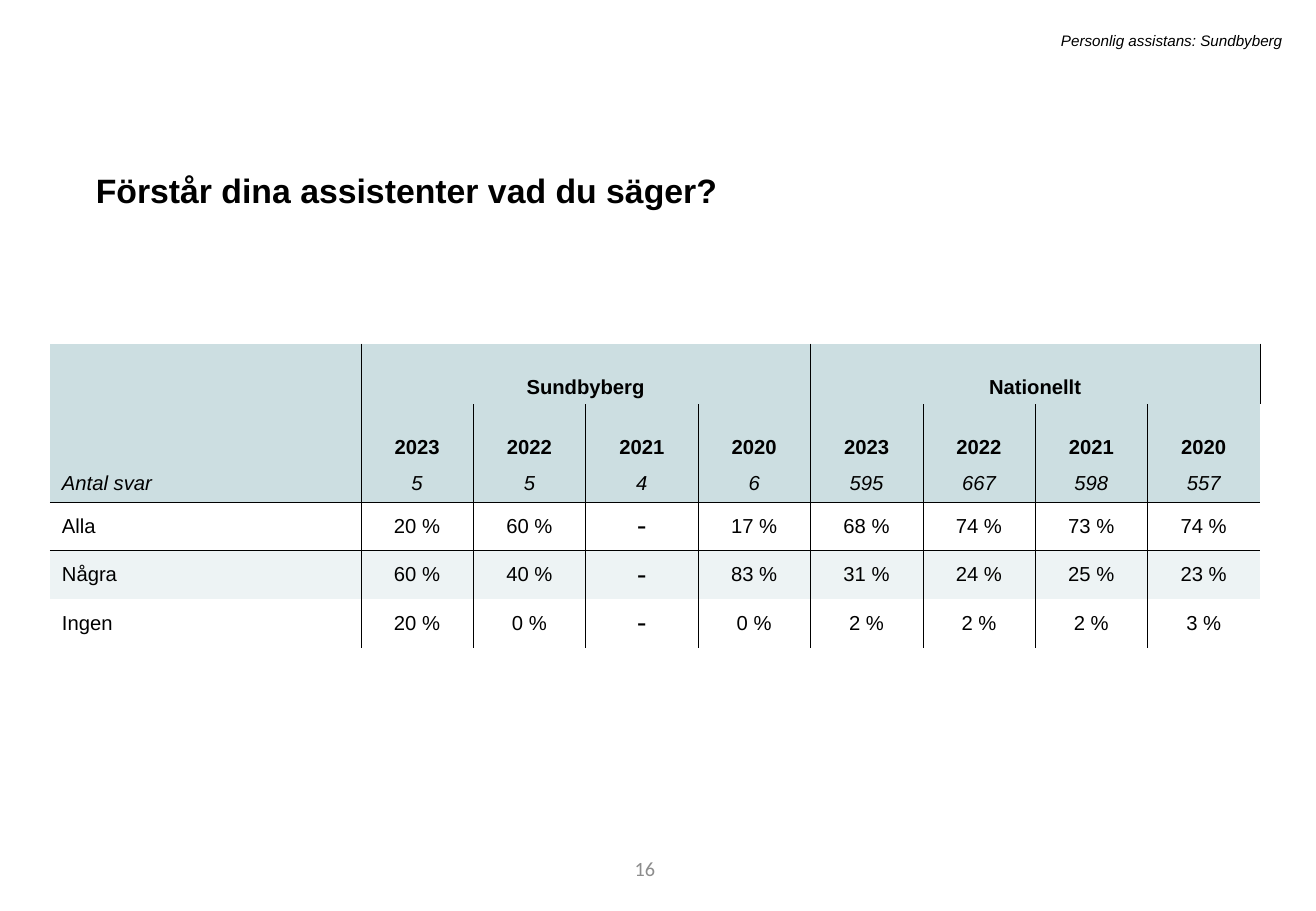
"""Build the survey results slide: do your assistants understand what you say?"""
from lxml import etree
from pptx import Presentation
from pptx.dml.color import RGBColor
from pptx.enum import text
from pptx.oxml import ns
from pptx.util import Inches, Pt

BLACK = RGBColor(0x00, 0x00, 0x00)
GREY = RGBColor(0x8C, 0x8C, 0x8C)
HEADER = RGBColor(0xCC, 0xDE, 0xE1)
BAND = RGBColor(0xED, 0xF3, 0xF4)
NO_STYLE = "{2D5ABB26-0587-4C30-8999-92F81FD0307C}"
LEFT, CENTER, RIGHT = text.PP_ALIGN.LEFT, text.PP_ALIGN.CENTER, text.PP_ALIGN.RIGHT
MIDDLE, BOTTOM = text.MSO_ANCHOR.MIDDLE, text.MSO_ANCHOR.BOTTOM

ROWS = [
    ["", "Sundbyberg", "", "", "", "Nationellt", "", "", ""],
    ["", "2023", "2022", "2021", "2020", "2023", "2022", "2021", "2020"],
    ["Antal svar", "5", "5", "4", "6", "595", "667", "598", "557"],
    ["Alla", "20 %", "60 %", "-", "17 %", "68 %", "74 %", "73 %", "74 %"],
    ["Några", "60 %", "40 %", "-", "83 %", "31 %", "24 %", "25 %", "23 %"],
    ["Ingen", "20 %", "0 %", "-", "0 %", "2 %", "2 %", "2 %", "3 %"],
]
HEIGHTS = [0.5, 0.5, 0.3, 0.4, 0.4, 0.4]
FILLS = [HEADER, HEADER, HEADER, None, BAND, None]


def add_text(s, box, words, size, color=BLACK, font="Arial", align=LEFT):
    tf = s.shapes.add_textbox(*map(Inches, box)).text_frame
    tf.word_wrap = True
    p = tf.paragraphs[0]
    p.text, p.alignment = words, align
    p.font.size, p.font.name, p.font.color.rgb = Pt(size), font, color
    return tf


def add_border(cell, side):
    ln = etree.SubElement(cell._tc.get_or_add_tcPr(), ns.qn(f"a:ln{side}"), w=str(Pt(0.25)))
    fill = etree.SubElement(ln, ns.qn("a:solidFill"))
    etree.SubElement(fill, ns.qn("a:srgbClr"), val=str(BLACK))


prs = Presentation()
prs.slide_width, prs.slide_height = Inches(10.83), Inches(7.5)
s = prs.slides.add_slide(prs.slide_layouts[6])

tf = add_text(s, (3.05, 6.95, 2.44, 0.4), "16", 12, GREY, "Calibri", RIGHT)
tf.vertical_anchor = MIDDLE

tf = add_text(s, (0.69, 1.28, 9.4, 0.47), "Förstår dina assistenter vad du säger?", 20)
p = tf.paragraphs[0]
p.font.bold, p.line_spacing, p.space_before = True, 1.2, Pt(10)

tf = add_text(s, (1.79, 0.21, 8.86, 0.25), "Personlig assistans: Sundbyberg", 9, align=RIGHT)
tf.paragraphs[0].font.italic = True

frame = s.shapes.add_table(len(ROWS), len(ROWS[0]), Inches(0.41), Inches(2.83),
                           Inches(9.96), Inches(sum(HEIGHTS)))
table = frame.table
table._tbl.tblPr.find(ns.qn("a:tableStyleId")).text = NO_STYLE
table.first_row = table.horz_banding = False
for c, column in enumerate(table.columns):
    column.width = Inches(0.925 if c else 2.56)
for first in (1, 5):
    table.cell(0, first).merge(table.cell(0, first + 3))

for r, row in enumerate(ROWS):
    table.rows[r].height = Inches(HEIGHTS[r])
    for c, words in enumerate(row):
        cell = table.cell(r, c)
        if c in (1, 5) or (r and c):
            add_border(cell, "L")
        if c in (0, 4) or (r and c < 8) or (r == 0 and c in (5, 8)):
            add_border(cell, "R")
        if r == 3:
            add_border(cell, "T")
        if r == 2:
            add_border(cell, "B")
        if FILLS[r] is None:
            cell.fill.background()
        else:
            cell.fill.solid()
            cell.fill.fore_color.rgb = FILLS[r]
        cell.vertical_anchor = BOTTOM if r < 2 else MIDDLE
        p = cell.text_frame.paragraphs[0]
        p.text, p.alignment = words, CENTER if c else LEFT
        p.font.name, p.font.size = ("Calibri", Pt(18)) if words == "-" else ("Arial", Pt(12))
        p.font.color.rgb = BLACK
        p.font.bold, p.font.italic = r < 2, r == 2

prs.save("out.pptx")
